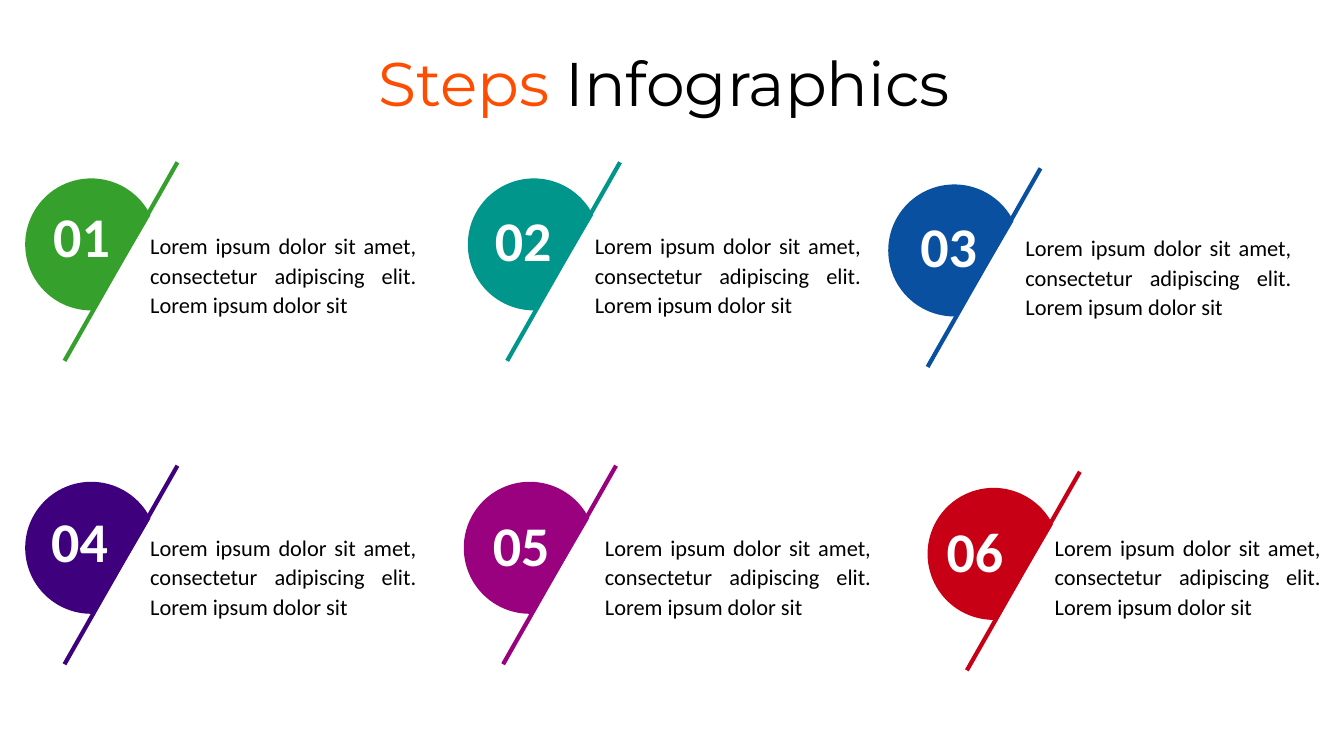
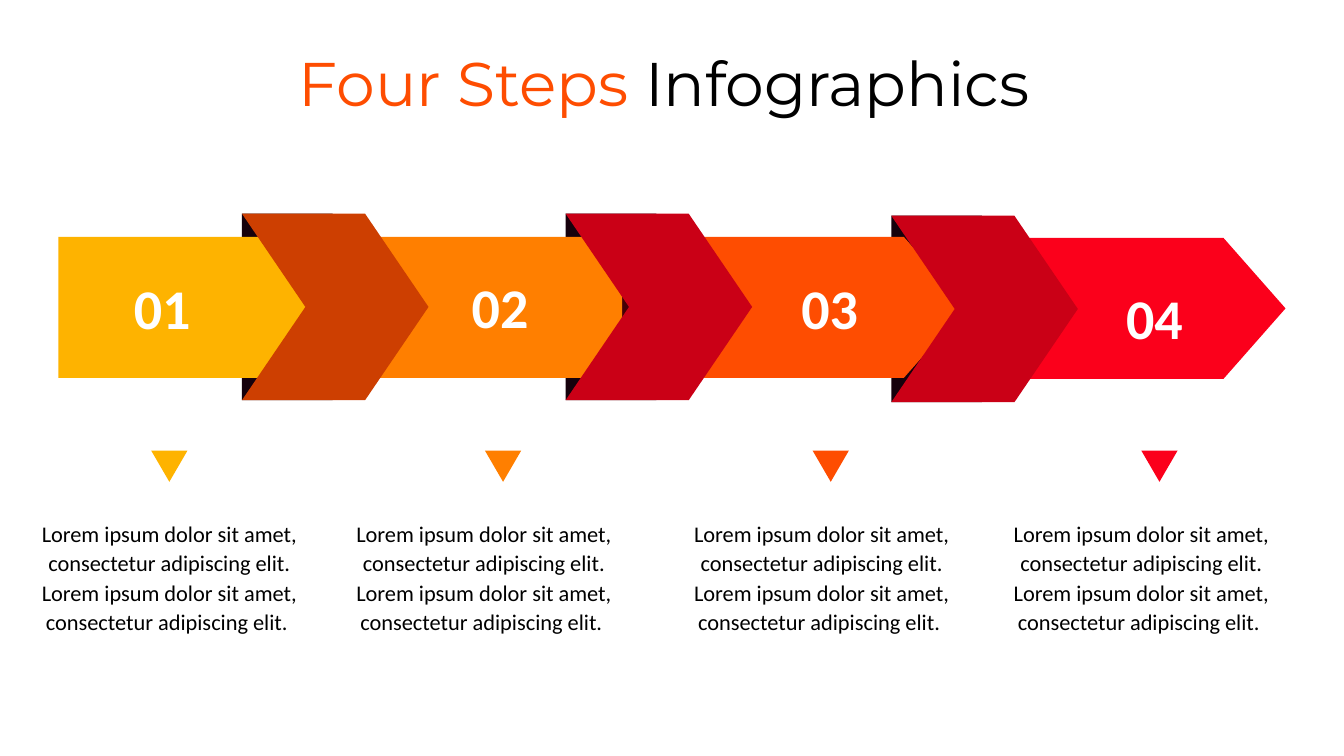
from lxml import etree
from pptx import Presentation
from pptx.dml.color import RGBColor
from pptx.enum.shapes import MSO_CONNECTOR, MSO_SHAPE
from pptx.enum.text import MSO_ANCHOR, MSO_AUTO_SIZE, PP_ALIGN
from pptx.oxml.ns import qn
from pptx.util import Inches, Pt

COLORS = {
    "black": "000000", "white": "FFFFFF", "accent": "FE4D01",
    "green": "35A02C", "teal": "00968C", "blue": "0950A0",
    "indigo": "3F007D", "magenta": "9A017F", "crimson": "C70015",
    "amber": "FEB300", "orange": "FF7F00", "red": "FB001B",
    "rust": "CD3F01", "dark red": "CA0016",
    "fold": "16010C", "notch": "450006",
}
LOREM = "Lorem ipsum dolor sit amet, consectetur adipiscing elit. "


def rgb(name):
    return RGBColor.from_string(COLORS[name])


def add_span(para, text, size=16, font="Calibri", color="black", bold=False):
    span = para.add_run()
    span.text = text
    span.font.size = Pt(size)
    span.font.name = font
    span.font.bold = bold
    span.font.color.rgb = rgb(color)


class Deck:
    """Holds the shared style and the page being drawn."""

    def __init__(self):
        self.deck = Presentation()
        self.deck.slide_width = Inches(13.33)
        self.deck.slide_height = Inches(7.5)
        self.page = None

    def add_page(self, accent_text, plain_text):
        self.page = self.deck.slides.add_slide(self.deck.slide_layouts[5])
        title = self.page.shapes.title
        title.left, title.top = Inches(0.92), Inches(0.4)
        title.width, title.height = Inches(11.5), Inches(0.91)
        frame = title.text_frame
        frame.auto_size = MSO_AUTO_SIZE.NONE
        frame.vertical_anchor = MSO_ANCHOR.MIDDLE
        para = frame.paragraphs[0]
        para.alignment = PP_ALIGN.CENTER
        para.line_spacing = 0.9
        add_span(para, accent_text, 44, "Montserrat", "accent")
        add_span(para, plain_text, 44, "Montserrat")

    def shape(self, kind, left, top, width, height, color, adjustments=()):
        shape = self.page.shapes.add_shape(
            kind, Inches(left), Inches(top), Inches(width), Inches(height))
        shape.shadow.inherit = False
        shape.fill.solid()
        shape.fill.fore_color.rgb = rgb(color)
        shape.line.fill.background()
        for index, value in enumerate(adjustments):
            shape.adjustments[index] = value

    def line(self, x1, y1, x2, y2, color):
        line = self.page.shapes.add_connector(
            MSO_CONNECTOR.STRAIGHT, Inches(x1), Inches(y1), Inches(x2), Inches(y2))
        line.line.color.rgb = rgb(color)
        line.line.width = Pt(3)
        etree.SubElement(line._element.spPr, qn("a:effectLst"))

    def text(self, text, left, top, width, height, align=PP_ALIGN.LEFT,
             spacing=1.0, margins=(0.1, 0.05), **font):
        box = self.page.shapes.add_textbox(
            Inches(left), Inches(top), Inches(width), Inches(height))
        frame = box.text_frame
        frame.word_wrap = True
        frame.auto_size = MSO_AUTO_SIZE.SHAPE_TO_FIT_TEXT
        frame.margin_left = frame.margin_right = Inches(margins[0])
        frame.margin_top = frame.margin_bottom = Inches(margins[1])
        para = frame.paragraphs[0]
        para.alignment = align
        para.line_spacing = spacing
        add_span(para, text, **font)

    def body(self, text, left, top, width, height, align):
        self.text(text, left, top, width, height, align, 1.1, (0.12, 0.06))

    def number(self, value, left, top):
        self.text(f"{value:02}", left, top, 0.97, 0.77,
                  size=40, color="white", bold=True)

    def badge(self, left, top, color):
        """Draw a disc cut off by a slanted line."""
        angles = (87, 333.7)
        # Angles are stored in 60000ths of a degree, adjustments in 100000ths.
        self.shape(MSO_SHAPE.CHORD, left, top, 1.31, 1.31, color,
                   [angle * 0.6 for angle in angles])
        self.line(left + 0.39, top + 1.81, left + 1.51, top - 0.16, color)


def add_six_steps(deck):
    deck.add_page("Steps", " Infographics ")
    # color, badge position, number position, text position
    steps = [
        ("green", (0.25, 1.77), (0.43, 1.95), (1.37, 2.22)),
        ("teal", (4.64, 1.77), (4.81, 1.99), (5.78, 2.22)),
        ("blue", (8.81, 1.83), (9.03, 2.05), (10.05, 2.24)),
        ("indigo", (0.25, 4.78), (0.41, 4.98), (1.37, 5.21)),
        ("magenta", (4.6, 4.78), (4.79, 5.02), (5.88, 5.21)),
        ("crimson", (9.2, 4.84), (9.29, 5.08), (10.34, 5.21)),
    ]
    for value, (color, badge, number, body) in enumerate(steps, 1):
        deck.badge(*badge, color)
        deck.body(LOREM + "Lorem ipsum dolor sit", *body, 2.88, 1.29,
                  PP_ALIGN.JUSTIFY)
        deck.number(value, *number)


def add_four_steps(deck):
    deck.add_page("Four Steps ", "Infographics ")
    folds = [(2.4, 2.12, "rust"), (5.61, 2.12, "dark red"), (8.84, 2.14, "dark red")]
    for left, top, _ in folds:
        deck.shape(MSO_SHAPE.RECTANGLE, left, top, 0.9, 1.85, "fold")
    deck.shape(MSO_SHAPE.RECTANGLE, 6.17, 2.35, 0.62, 1.4, "notch")

    bands = [
        (MSO_SHAPE.RECTANGLE, 0.58, 2.35, 2.8, "amber", ()),
        (MSO_SHAPE.RECTANGLE, 3.38, 2.35, 2.79, "orange", ()),
        (MSO_SHAPE.CHEVRON, 6.17, 2.35, 3.41, "accent", (0.44,)),
        (MSO_SHAPE.PENTAGON, 9.74, 2.36, 3.01, "red", (0.44,)),
    ]
    for kind, left, top, width, color, adjustments in bands:
        deck.shape(kind, left, top, width, 1.4, color, adjustments)
    for left, top, color in folds:
        deck.shape(MSO_SHAPE.CHEVRON, left, top, 1.85, 1.85, color, (0.34,))

    # color, pointer left, text left, number position
    steps = [
        ("amber", 1.5, 0.2, (1.23, 2.66)),
        ("orange", 4.81, 3.32, (4.58, 2.65)),
        ("accent", 8.06, 6.67, (7.85, 2.66)),
        ("red", 11.32, 9.84, (11.07, 2.76)),
    ]
    for value, (color, pointer_left, body_left, number) in enumerate(steps, 1):
        deck.shape(MSO_SHAPE.FLOWCHART_MERGE, pointer_left, 4.47, 0.36, 0.31, color)
        deck.body(LOREM * 2, body_left, 5.07, 2.96, 1.88, PP_ALIGN.CENTER)
        deck.number(value, *number)


def main():
    deck = Deck()
    add_six_steps(deck)
    add_four_steps(deck)
    deck.deck.save("out.pptx")


if __name__ == "__main__":
    main()
